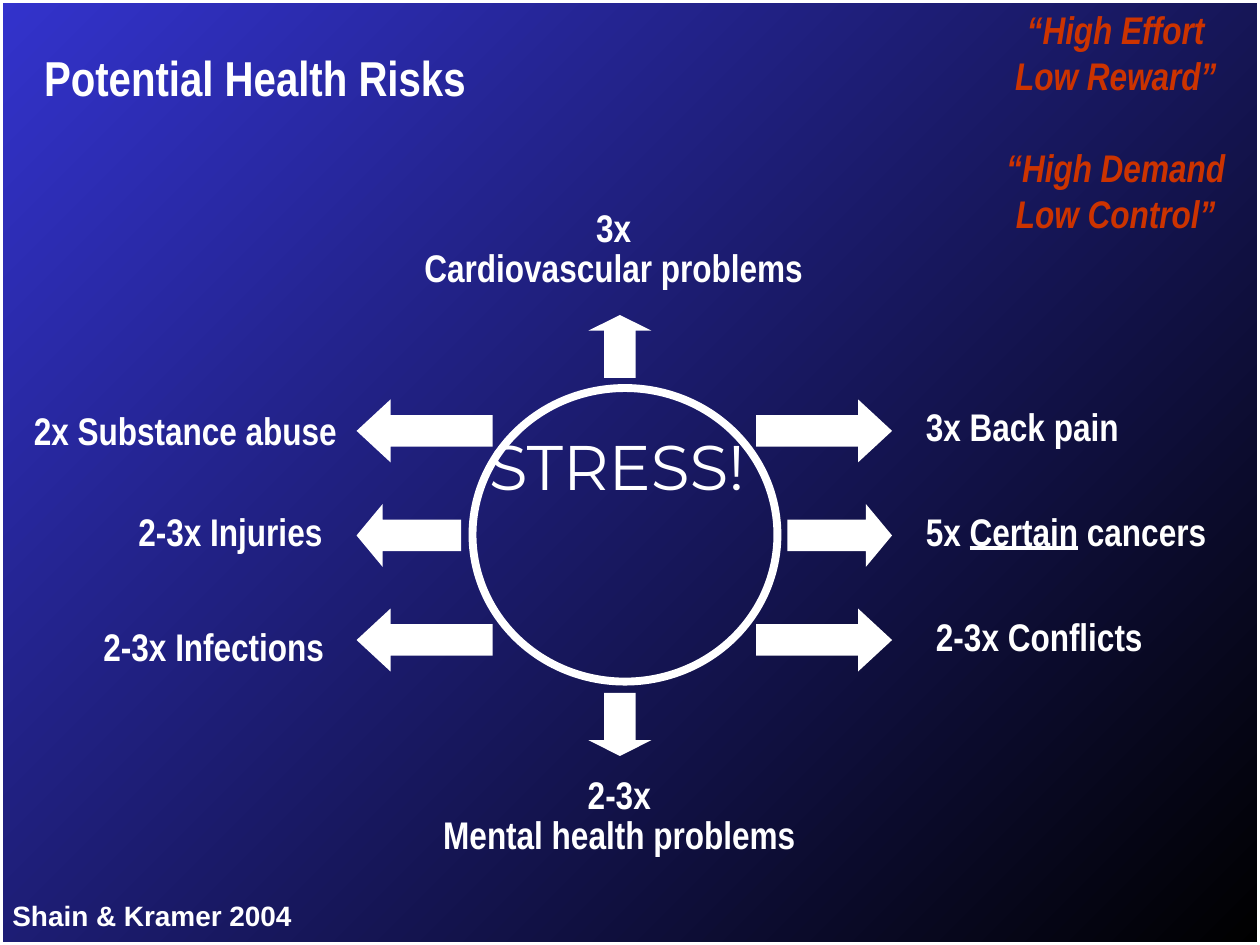
from pptx import Presentation
from pptx import util as u
from pptx.dml.color import RGBColor
from pptx.enum import shapes, text

SHAPE = shapes.MSO_SHAPE
LEFT, CENTER, RIGHT = text.PP_ALIGN.LEFT, text.PP_ALIGN.CENTER, text.PP_ALIGN.RIGHT
WHITE, ORANGE = "FFFFFF", "CC3300"
NARROW = "Arial Narrow"


def color(value):
    return RGBColor.from_string(value)


class Slide:
    def __init__(self, deck):
        self.page = deck.slides.add_slide(deck.slide_layouts[5])

    def background(self, start, end):
        fill = self.page.background.fill
        fill.gradient()
        fill.gradient_angle = 315
        for stop, value, position in zip(fill.gradient_stops, (start, end), (0, 1)):
            stop.color.rgb = color(value)
            stop.position = position

    def set_text(self, box, lines, size=22, font=NARROW, ink=WHITE, bold=True,
                 italic=False, align=LEFT, spacing=(1,), gaps=(0,), wrap=True, fit=True):
        frame = box.text_frame
        frame.text = "\n".join(lines)
        frame.word_wrap = wrap
        frame.vertical_anchor = text.MSO_ANCHOR.TOP
        frame.auto_size = (text.MSO_AUTO_SIZE.SHAPE_TO_FIT_TEXT if fit
                           else text.MSO_AUTO_SIZE.NONE)
        for index, para in enumerate(frame.paragraphs):
            para.alignment = align
            para.line_spacing = spacing[index % len(spacing)]
            para.space_before = u.Pt(gaps[index % len(gaps)])
            pieces = lines[index].split("_")
            para.text = pieces[0]
            for piece in pieces[1:]:
                para.add_run().text = piece
            for number, span in enumerate(para.runs):
                span.font.size = u.Pt(size)
                span.font.name = font
                span.font.bold = bold
                span.font.italic = italic
                span.font.underline = number % 2 == 1
                span.font.color.rgb = color(ink)

    def title(self, place, line, **style):
        box = self.page.shapes.title
        box.left, box.top, box.width, box.height = map(u.Inches, place)
        self.set_text(box, [line], **style)

    def label(self, place, lines, **style):
        box = self.page.shapes.add_textbox(*map(u.Inches, place))
        self.set_text(box, lines, **style)

    def outline(self, kind, place, weight):
        shape = self.page.shapes.add_shape(kind, *map(u.Inches, place))
        shape.shadow.inherit = False
        shape.fill.background()
        shape.line.color.rgb = color(WHITE)
        shape.line.width = u.Pt(weight)

    def arrow(self, kind, place):
        shape = self.page.shapes.add_shape(kind, *map(u.Inches, place))
        shape.shadow.inherit = False
        shape.fill.solid()
        shape.fill.fore_color.rgb = color(WHITE)
        shape.line.fill.background()
        width, height = place[2:]
        shape.adjustments[0] = 0.5
        shape.adjustments[1] = 0.25 * max(width, height) / min(width, height)


def main():
    deck = Presentation()
    deck.slide_width, deck.slide_height = u.Inches(10), u.Inches(7.5)
    slide = Slide(deck)
    slide.background("3333CC", "000000")
    slide.title((0.25, 0.33, 9.42, 1.23), "Potential Health Risks", size=28)

    slide.outline(SHAPE.OVAL, (3.75, 3.08, 2.42, 2.33), 4.5)
    slide.arrow(SHAPE.UP_ARROW, (4.67, 2.5, 0.5, 0.5))
    slide.arrow(SHAPE.DOWN_ARROW, (4.67, 5.5, 0.5, 0.5))
    left_tip, right_tip = 2.83, 7.08
    for top, length in ((3.17, 1.08), (4, 0.83), (4.83, 1.08)):
        slide.arrow(SHAPE.LEFT_ARROW, (left_tip, top, length, 0.5))
        slide.arrow(SHAPE.RIGHT_ARROW, (right_tip - length, top, length, 0.5))

    slide.label((7.71, 0, 2.29, 1.93),
                ["“High Effort", "Low Reward”", "“High Demand", "Low Control”"],
                ink=ORANGE, italic=True, align=CENTER, gaps=(0, 0, 26, 0))

    risks = (
        ((0.17, 3.25, 2.75, 0.39), "2x Substance abuse", LEFT, 0.8),
        ((1, 4.08, 1.75, 0.36), "2-3x Injuries", LEFT, 0.7),
        ((0.42, 5, 2.25, 0.36), "2-3x Infections", RIGHT, 0.7),
        ((7.25, 3.25, 2.25, 0.36), "3x Back pain", LEFT, 0.7),
        ((7.25, 4.08, 2.5, 0.36), "5x _Certain_ cancers", LEFT, 0.7),
        ((7.33, 4.92, 2.25, 0.36), "2-3x Conflicts", LEFT, 0.7),
    )
    for place, line, align, spacing in risks:
        slide.label(place, [line], align=align, spacing=(spacing,))

    for place, lines in (
        ((3.33, 6.17, 3.17, 0.65), ["2-3x", "Mental health problems"]),
        ((3.08, 1.67, 3.58, 0.65), ["3x", "Cardiovascular problems"]),
    ):
        slide.label(place, lines, align=CENTER, spacing=(0.7, 0.3), gaps=(0, 13))

    slide.label((0, 7.08, 2.42, 0.37), ["Shain & Kramer 2004"],
                size=16, font="Arial", wrap=False)
    slide.outline(SHAPE.RECTANGLE, (0, 0, 10, 7.5), 3)
    slide.label((3.97, 3.34, 1.85, 1.66), ["STRESS!"], size=36, font="Montserrat",
                bold=False, align=CENTER, wrap=False, fit=False)
    deck.save("out.pptx")


if __name__ == "__main__":
    main()
